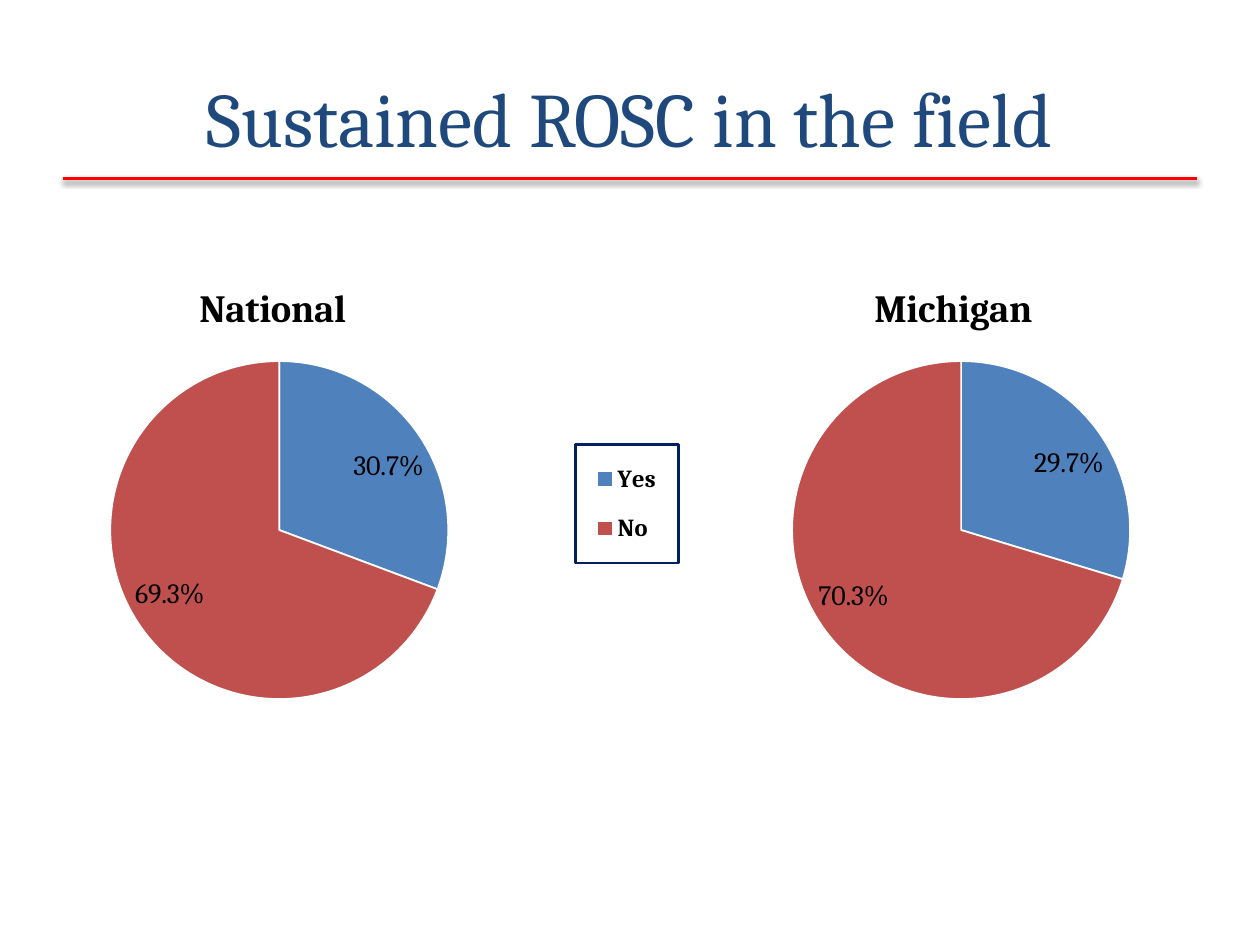
from lxml.etree import SubElement
from pptx import Presentation
from pptx.chart.data import CategoryChartData
from pptx.dml.color import RGBColor
from pptx.enum.chart import XL_CHART_TYPE, XL_LABEL_POSITION, XL_LEGEND_POSITION
from pptx.enum.shapes import MSO_CONNECTOR
from pptx.enum.text import MSO_ANCHOR, PP_ALIGN
from pptx.oxml import parse_xml
from pptx.oxml.ns import nsdecls, qn
from pptx.util import Pt

FONT = "Cambria"
SLICE_COLORS = ("4F81BD", "C0504D")
PIE_TOP, PIE_WIDTH, PIE_HEIGHT = 108, 391, 356.4


def color(hex_string):
    return RGBColor.from_string(hex_string)


def style_font(font, size, hex_string="000000", bold=False):
    font.name = FONT
    font.size = Pt(size)
    font.bold = bold
    font.color.rgb = color(hex_string)


def add_text(slide, text, left, top, width, height, **style):
    box = slide.shapes.add_textbox(Pt(left), Pt(top), Pt(width), Pt(height))
    frame = box.text_frame
    frame.word_wrap = True
    frame.vertical_anchor = MSO_ANCHOR.MIDDLE
    paragraph = frame.paragraphs[0]
    paragraph.alignment = PP_ALIGN.CENTER
    run = paragraph.add_run()
    run.text = text
    style_font(run.font, **style)


def add_rule(slide, left, right, y):
    rule = slide.shapes.add_connector(
        MSO_CONNECTOR.STRAIGHT, Pt(left), Pt(y), Pt(right), Pt(y))
    rule.line.color.rgb = color("FF0000")
    rule.line.width = Pt(2)
    # Soft shadow straight below the rule
    effects = SubElement(rule._element.spPr, qn("a:effectLst"))
    shadow = SubElement(effects, qn("a:outerShdw"), blurRad=str(Pt(3.1)),
                        dist=str(Pt(1.6)), dir="5400000", rotWithShape="0")
    black = SubElement(shadow, qn("a:srgbClr"), val="000000")
    SubElement(black, qn("a:alpha"), val="38000")


def set_layout(part, index, **fractions):
    """Place a chart part by fractions of the chart's size."""
    for old in part.findall(qn("c:layout")):
        part.remove(old)
    layout = parse_xml(f"<c:layout {nsdecls('c')}/>")
    manual = SubElement(layout, qn("c:manualLayout"))
    if part.tag == qn("c:plotArea"):
        SubElement(manual, qn("c:layoutTarget"), val="inner")
    for axis in ("x", "y"):
        SubElement(manual, qn(f"c:{axis}Mode"), val="edge")
    for key, value in fractions.items():
        SubElement(manual, qn(f"c:{key}"), val=str(value))
    part.insert(index, layout)


def add_legend(chart):
    chart.has_legend = True
    legend = chart.legend
    legend.position = XL_LEGEND_POSITION.RIGHT
    legend.include_in_layout = False
    style_font(legend.font, 14, bold=True)
    element = legend._element
    set_layout(element, 1, x=0.81, y=0.41, w=0.15, h=0.19)
    # Navy frame
    element.find(qn("c:txPr")).addprevious(parse_xml(
        f"<c:spPr {nsdecls('c', 'a')}><a:ln w='{Pt(1.5)}'><a:solidFill>"
        "<a:srgbClr val='002060'/></a:solidFill></a:ln></c:spPr>"))


def add_pie(slide, region, left, categories, values, title_x):
    data = CategoryChartData()
    data.categories = categories
    data.add_series("Series 1", values)
    chart = slide.shapes.add_chart(
        XL_CHART_TYPE.PIE, Pt(left), Pt(PIE_TOP), Pt(PIE_WIDTH),
        Pt(PIE_HEIGHT), data).chart
    style_font(chart.font, 18)
    chart.has_legend = False

    # Region heading
    chart.has_title = True
    heading = chart.chart_title
    heading.include_in_layout = False
    run = heading.text_frame.paragraphs[0].add_run()
    run.text = region
    style_font(run.font, 22, bold=True)
    set_layout(heading._element, 1, x=title_x, y=0.14)

    # Slices and percentages
    plot = chart.plots[0]
    plot.vary_by_categories = True
    for index, slice_color in enumerate(SLICE_COLORS):
        pie_slice = plot.series[0].points[index].format
        pie_slice.fill.solid()
        pie_slice.fill.fore_color.rgb = color(slice_color)
        pie_slice.line.color.rgb = color("FFFFFF")
        pie_slice.line.width = Pt(1)
    labels = plot.series[0].data_labels
    labels.show_value = False
    labels.show_percentage = True
    labels.number_format = "0.0%"
    labels.number_format_is_linked = False
    labels.position = XL_LABEL_POSITION.BEST_FIT
    style_font(labels.font, 16)
    plot_area = chart._chartSpace.chart.plotArea
    set_layout(plot_area, 0, x=0.103, y=0.276, w=0.548, h=0.542)
    return chart


def main():
    presentation = Presentation()
    presentation.slide_width, presentation.slide_height = Pt(720), Pt(540)
    slide = presentation.slides.add_slide(presentation.slide_layouts[6])

    # Title and rule
    add_rule(slide, 36, 684, 102)
    add_text(slide, "Sustained ROSC in the field", 36, 21.6, 648, 90,
             size=44, hex_string="1F497D")

    # Pies, sharing the legend of the first
    national = add_pie(slide, "National", 12.2, ("Yes", "No"), (30.7, 69.3), 0.25)
    add_legend(national)
    add_pie(slide, "Michigan", 401.8, ("1", "2"), (29.7, 70.3), 0.24)

    presentation.save("out.pptx")


if __name__ == "__main__":
    main()
